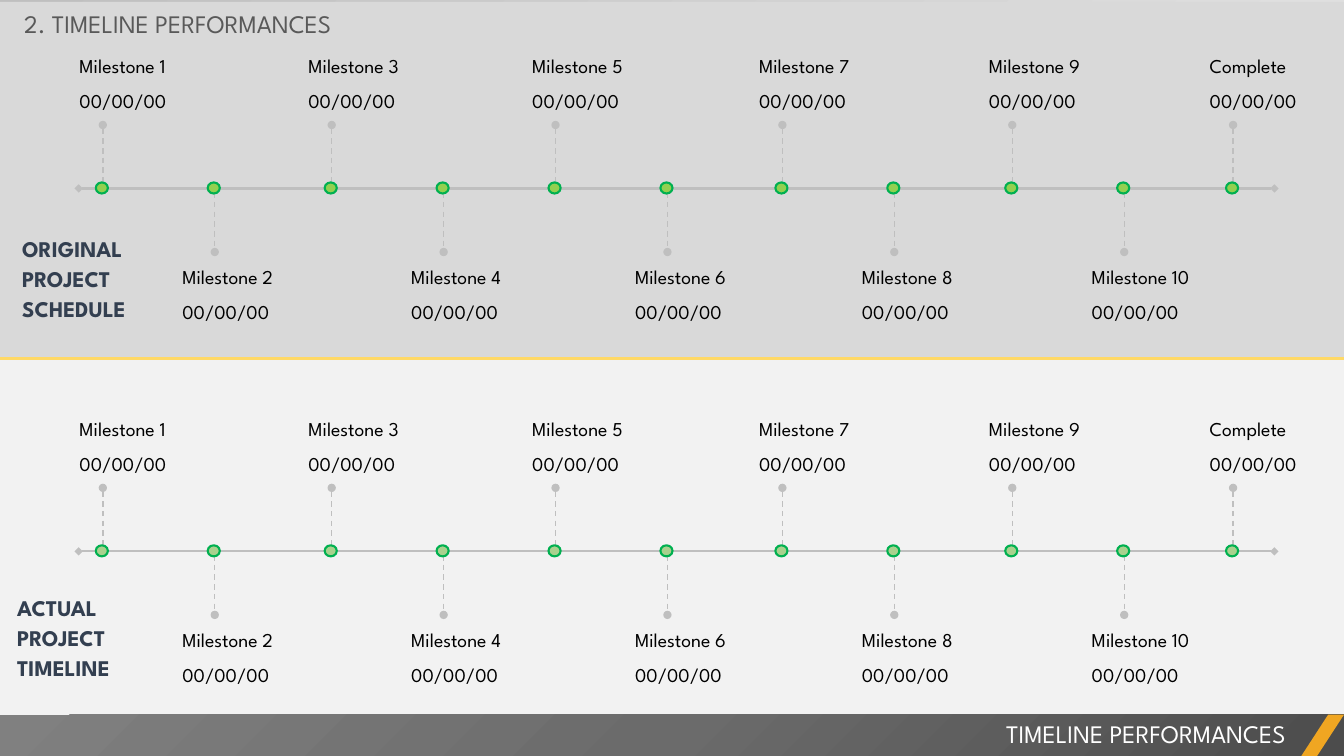
import pptx
import pptx.dml.color
import pptx.enum.dml
import pptx.enum.shapes
import pptx.enum.text
import pptx.oxml
import pptx.oxml.ns
import pptx.util

Inches = pptx.util.Inches
Pt = pptx.util.Pt
RGB = pptx.dml.color.RGBColor
SHAPE = pptx.enum.shapes.MSO_SHAPE
ALIGN = pptx.enum.text.PP_ALIGN
DASH = pptx.enum.dml.MSO_LINE.DASH
qn = pptx.oxml.ns.qn
NS = pptx.oxml.ns.nsdecls("a")

FONT = "League Spartan"
BLACK = RGB(0x00, 0x00, 0x00)
WHITE = RGB(0xFF, 0xFF, 0xFF)
PALE = RGB(0xF2, 0xF2, 0xF2)
LIGHT = RGB(0xD9, 0xD9, 0xD9)
SILVER = RGB(0xBF, 0xBF, 0xBF)
GRAY = RGB(0x59, 0x59, 0x59)
NAVY = RGB(0x33, 0x3F, 0x50)
GREEN = RGB(0x00, 0xB0, 0x50)
LIME = RGB(0x92, 0xD0, 0x50)
SAGE = RGB(0xA9, 0xD1, 0x8E)
YELLOW = RGB(0xFF, 0xD9, 0x66)
ORANGE = RGB(0xF0, 0xA6, 0x22)
BAR = ((0, RGB(0x4C, 0x4C, 0x4C)), (50, RGB(0x6B, 0x6B, 0x6B)),
       (100, RGB(0x80, 0x80, 0x80)))

STEMS = (1.02, 2.13, 3.29, 4.4, 5.51, 6.62, 7.76, 8.87, 10.04, 11.15, 12.23)
NAMES = [f"Milestone {n}" for n in range(1, 11)] + ["Complete"]
DATE = "00/00/00"
REACH = 0.63


def add_shape(shapes, kind, x, y, w, h, fill=None, edge=None):
    shape = shapes.add_shape(kind, Inches(x), Inches(y), Inches(w), Inches(h))
    shape.shadow.inherit = False
    if fill is not None:
        shape.fill.solid()
        shape.fill.fore_color.rgb = fill
    if edge is None:
        shape.line.fill.background()
    else:
        shape.line.color.rgb = edge
        shape.line.width = Pt(1.5)
    return shape


def add_line(shapes, x1, y1, x2, y2, color, width, ends=None, dash=None):
    """Draw a straight line with the same arrowhead at both ends."""
    link = shapes.add_connector(
        pptx.enum.shapes.MSO_CONNECTOR.STRAIGHT,
        Inches(x1), Inches(y1), Inches(x2), Inches(y2))
    link.line.color.rgb = color
    link.line.width = Pt(width)
    if dash is not None:
        link.line.dash_style = dash
    props = link._element.spPr
    if ends:
        for tag in ("headEnd", "tailEnd"):
            props.find(qn("a:ln")).append(
                pptx.oxml.parse_xml(f'<a:{tag} {NS} type="{ends}"/>'))
    props.append(pptx.oxml.parse_xml(f"<a:effectLst {NS}/>"))


def fill_text(frame, lines, size, color, bold=False, align=ALIGN.LEFT):
    """Write one paragraph per line and return the paragraphs."""
    frame.word_wrap = True
    frame.auto_size = pptx.enum.text.MSO_AUTO_SIZE.NONE
    frame.vertical_anchor = pptx.enum.text.MSO_ANCHOR.TOP
    for i, line in enumerate(lines):
        para = frame.paragraphs[0] if i == 0 else frame.add_paragraph()
        para.alignment = align
        run = para.add_run()
        run.text = line
        run.font.name = FONT
        run.font.size = Pt(size)
        run.font.bold = bold
        run.font.color.rgb = color
    return frame.paragraphs


def add_text(shapes, x, y, w, h, lines, size, color, **style):
    box = shapes.add_textbox(Inches(x), Inches(y), Inches(w), Inches(h))
    return box.text_frame, fill_text(box.text_frame, lines, size, color, **style)


def add_track(slide, y, fill):
    """Draw a grouped timeline whose axis lies at height y."""
    shapes = slide.shapes.add_group_shape().shapes
    add_line(shapes, 0.78, y, 12.64, y, SILVER, 1.5, "diamond")
    for i, (x, name) in enumerate(zip(STEMS, NAMES)):
        above = i % 2 == 0
        top = y - REACH if above else y
        add_line(shapes, x, top, x, top + REACH, SILVER, 1, "oval", DASH)
        add_shape(shapes, SHAPE.OVAL, x - 0.07, y - 0.06, 0.12, 0.11, fill, GREEN)
        left, head = (x - 0.33, y - 1.38) if above else (x - 0.42, y + 0.71)
        _, paras = add_text(shapes, left, head, 1.9, 0.64, (name, DATE), 14, BLACK)
        for para in paras:
            para.space_after = Pt(8)


def add_label(slide, x, y, w, text):
    frame, paras = add_text(slide.shapes, x, y, w, 1.02, [text], 16, NAVY, bold=True)
    frame.margin_left = frame.margin_right = Inches(0.12)
    frame.margin_top = frame.margin_bottom = Inches(0.06)
    paras[0].line_spacing = Pt(21.5)


def set_ground(slide):
    fill = slide.background.fill
    fill.gradient()
    fill.gradient_angle = 135
    for stop, place, color in zip(fill.gradient_stops, (0, 1), (PALE, SILVER)):
        stop.position = place
        stop.color.rgb = color


def set_title(slide, text):
    title = slide.shapes.title
    title.left, title.top = Inches(0.14), Inches(0.03)
    title.width, title.height = Inches(5.31), Inches(0.4)
    fill_text(title.text_frame, [text], 18, GRAY)
    slide.shapes._spTree.append(title._element)


def add_footer(slide, text):
    bar = add_shape(slide.shapes, SHAPE.RECTANGLE, 0, 7.09, 13.33, 0.42, BAR[0][1])
    stops = "".join(f'<a:gs pos="{place * 1000}"><a:srgbClr val="{color}"/></a:gs>'
                    for place, color in BAR)
    props = bar._element.spPr
    props.replace(props.find(qn("a:solidFill")), pptx.oxml.parse_xml(
        f'<a:gradFill {NS}><a:gsLst>{stops}</a:gsLst><a:path path="circle">'
        '<a:fillToRect l="100000" t="100000"/></a:path></a:gradFill>'))
    add_text(slide.shapes, 5.25, 7.08, 7.6, 0.4, [text], 18, WHITE, align=ALIGN.RIGHT)
    slash = add_shape(slide.shapes, SHAPE.PARALLELOGRAM, 12.9, 7.09, 0.43, 0.42, ORANGE)
    slash.adjustments[0] = 0.65


def main():
    deck = pptx.Presentation()
    deck.slide_width, deck.slide_height = Inches(13.33), Inches(7.5)
    slide = deck.slides.add_slide(deck.slide_layouts[5])
    set_ground(slide)
    add_shape(slide.shapes, SHAPE.RECTANGLE, -0.02, 0.02, 13.35, 3.54, LIGHT)
    add_shape(slide.shapes, SHAPE.RECTANGLE, -0.02, 3.56, 13.35, 3.96, PALE)
    add_track(slide, 1.87, LIME)
    add_label(slide, 0.1, 2.24, 1.32, "ORIGINAL PROJECT SCHEDULE")
    add_track(slide, 5.47, SAGE)
    add_label(slide, 0.05, 5.8, 1.39, "ACTUAL PROJECT TIMELINE")
    add_line(slide.shapes, 0, 3.56, 13.33, 3.56, YELLOW, 2.25)
    set_title(slide, "2. TIMELINE PERFORMANCES")
    add_footer(slide, "TIMELINE PERFORMANCES")
    deck.save("out.pptx")


if __name__ == "__main__":
    main()
